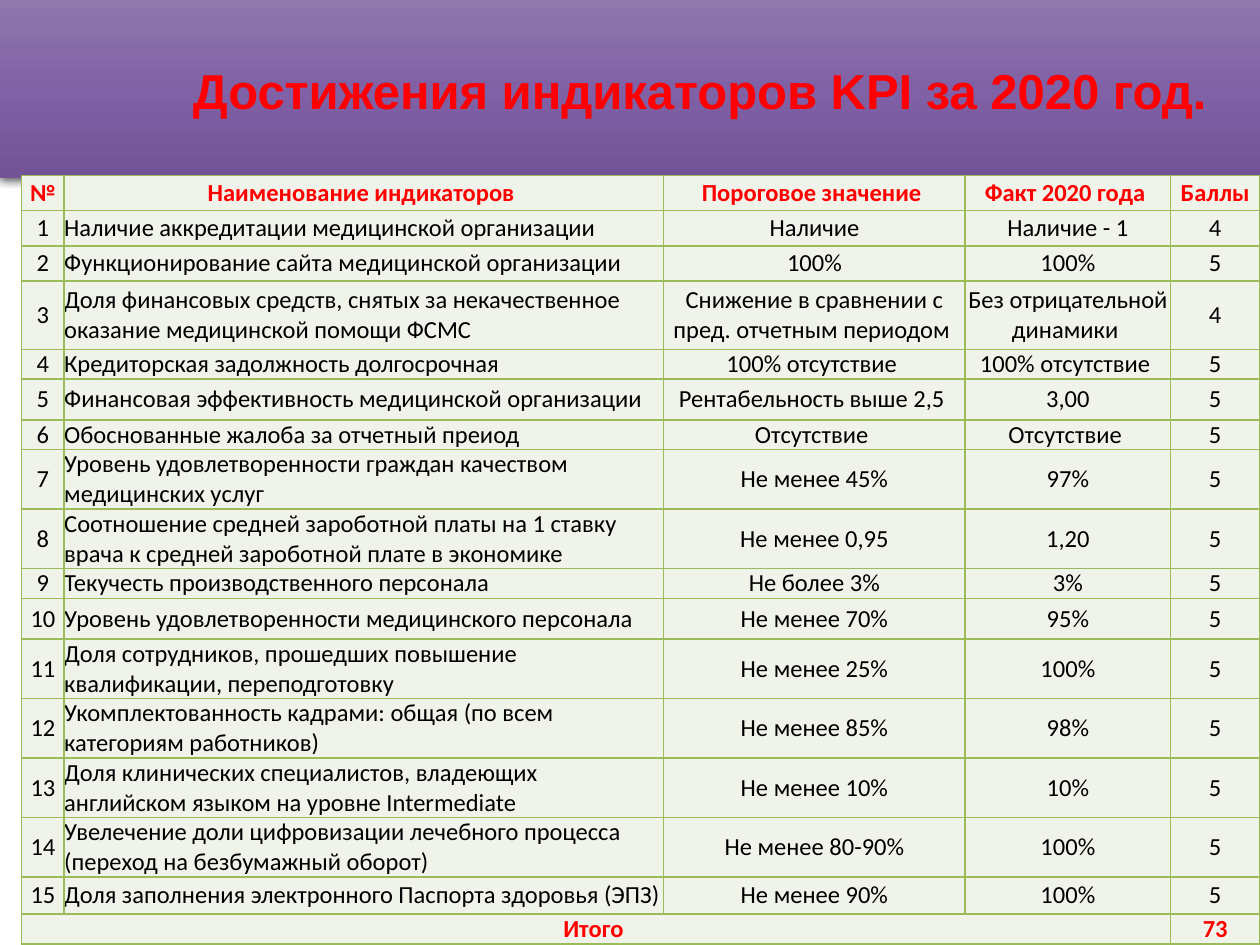
from copy import deepcopy

from pptx import Presentation
from pptx.dml.color import RGBColor
from pptx.enum.shapes import MSO_SHAPE
from pptx.enum.text import MSO_ANCHOR, MSO_AUTO_SIZE, PP_ALIGN
from pptx.oxml import parse_xml
from pptx.oxml.ns import nsdecls, qn
from pptx.util import Pt

RECTANGLE = MSO_SHAPE.RECTANGLE
MIDDLE = MSO_ANCHOR.MIDDLE
GROW = MSO_AUTO_SIZE.SHAPE_TO_FIT_TEXT
LEFT, CENTER, JUSTIFY = PP_ALIGN.LEFT, PP_ALIGN.CENTER, PP_ALIGN.JUSTIFY

RED = RGBColor(0xFF, 0x00, 0x00)
BLACK = RGBColor(0x00, 0x00, 0x00)
CELL_FILL = RGBColor(0xEF, 0xF3, 0xEA)
BORDER = RGBColor(0x9B, 0xBB, 0x59)
BAND_COLORS = (RGBColor(0x8E, 0x78, 0xAC), RGBColor(0x80, 0x61, 0xA5),
               RGBColor(0x71, 0x53, 0x96))

TITLE = "Достижения индикаторов KPI за 2020 год."
HEADER = ("№", "Наименование индикаторов ", "Пороговое значение ",
          "Факт 2020 года ", "Баллы")
# Name, threshold, actual value, points
INDICATORS = (
    ("Наличие аккредитации медицинской организации", "Наличие", "Наличие - 1", 4),
    ("Функционирование сайта медицинской организации", "100%", "100%", 5),
    ("Доля финансовых средств, снятых за некачественное оказание медицинской помощи ФСМС",
     "Снижение в сравнении с пред. отчетным периодом ", "Без отрицательной динамики ", 4),
    ("Кредиторская задолжность долгосрочная", "100% отсутствие ", "100% отсутствие ", 5),
    ("Финансовая эффективность медицинской организации", "Рентабельность выше 2,5 ",
     "3,00", 5),
    ("Обоснованные жалоба за отчетный преиод", "Отсутствие ", "Отсутствие ", 5),
    ("Уровень удовлетворенности граждан качеством медицинских услуг",
     "Не менее 45%", "97%", 5),
    ("Соотношение средней зароботной платы на 1 ставку врача к средней зароботной "
     "плате в экономике", "Не менее 0,95", "1,20", 5),
    ("Текучесть производственного персонала", "Не более 3%", "3%", 5),
    ("Уровень удовлетворенности медицинского персонала", "Не менее 70%", "95%", 5),
    ("Доля сотрудников, прошедших повышение квалификации, переподготовку",
     "Не менее 25%", "100%", 5),
    ("Укомплектованность кадрами: общая (по всем категориям работников)",
     "Не менее 85%", "98%", 5),
    ("Доля клинических специалистов, владеющих английском языком на уровне Intermediate",
     "Не менее 10%", "10%", 5),
    ("Увелечение доли цифровизации лечебного процесса (переход на безбумажный оборот)",
     "Не менее 80-90%", "100%", 5),
    ("Доля заполнения электронного Паспорта здоровья (ЭПЗ)", "Не менее 90%", "100%", 5),
)
TOTAL_LABEL = "Итого "

COLUMN_SHARES = (24.3, 342.6, 172.3, 117.4, 50.9)
ONE_LINE, TWO_LINES = 17.1, 34.1
ROW_HEIGHTS = (20, 20.5, 20, 39.2, ONE_LINE, 23.3, ONE_LINE, TWO_LINES, TWO_LINES,
               ONE_LINE, 23.3, *[TWO_LINES] * 4, 21.3, ONE_LINE)


def format_paragraph(paragraph, alignment, font_name, size, color, bold):
    paragraph.alignment = alignment
    for run in paragraph.runs:
        run.font.name = font_name
        run.font.size = Pt(size)
        run.font.bold = bold
        run.font.color.rgb = color


def add_band(slide, left, top, width, height):
    band = slide.shapes.add_shape(RECTANGLE, Pt(left), Pt(top), Pt(width), Pt(height))
    band.line.fill.background()

    # Three-stop gradient running downwards
    band.fill.gradient()
    band.fill.gradient_angle = 270
    properties = band._element.spPr
    stop_list = properties.find(".//" + qn("a:gsLst"))
    stop_list.append(deepcopy(stop_list[-1]))
    for index, (stop, color) in enumerate(zip(band.fill.gradient_stops, BAND_COLORS)):
        stop.position = index / 2
        stop.color.rgb = color

    # Soft shadow below the band
    band.shadow.inherit = False
    properties.find(qn("a:effectLst")).append(parse_xml(
        f'<a:outerShdw {nsdecls("a")} blurRad="{Pt(4.5)}" dist="{Pt(1.5)}" dir="5400000" '
        'rotWithShape="0"><a:srgbClr val="000000"><a:alpha val="63000"/></a:srgbClr>'
        '</a:outerShdw>'))

    # The band lies behind the title placeholder
    slide.shapes._spTree.insert(2, band._element)


def place_title(slide, left, top, width, height):
    title = slide.shapes.title
    title.left, title.top = Pt(left), Pt(top)
    title.width, title.height = Pt(width), Pt(height)
    frame = title.text_frame
    frame.text = TITLE
    frame.word_wrap = True
    frame.auto_size = GROW
    frame.vertical_anchor = MIDDLE
    format_paragraph(frame.paragraphs[0], JUSTIFY, "Arial", 28, RED, True)


def add_borders(cell):
    properties = cell._tc.get_or_add_tcPr()
    for index, side in enumerate(("lnL", "lnR", "lnT", "lnB")):
        properties.insert(index, parse_xml(
            f'<a:{side} {nsdecls("a")} w="{Pt(1)}"><a:solidFill>'
            f'<a:srgbClr val="{BORDER}"/></a:solidFill></a:{side}>'))


def style_cell(cell, text, alignment, color, bold):
    cell.margin_left = cell.margin_right = cell.margin_top = cell.margin_bottom = 0
    cell.vertical_anchor = MIDDLE
    cell.fill.solid()
    cell.fill.fore_color.rgb = CELL_FILL
    add_borders(cell)
    cell.text_frame.text = text
    paragraph = cell.text_frame.paragraphs[0]
    paragraph.font.size = Pt(14)
    format_paragraph(paragraph, alignment, "Calibri", 14, color, bold)


def add_indicator_table(slide, left, top, width, height):
    total = sum(points for *_, points in INDICATORS)
    rows = [HEADER]
    rows += [(str(number), name, threshold, actual, str(points))
             for number, (name, threshold, actual, points) in enumerate(INDICATORS, 1)]
    rows.append((TOTAL_LABEL, "", "", "", str(total)))

    table = slide.shapes.add_table(len(rows), len(HEADER), Pt(left), Pt(top),
                                   Pt(width), Pt(height)).table
    table.first_row = table.horz_banding = False
    for column, share in zip(table.columns, COLUMN_SHARES):
        column.width = Pt(width * share / sum(COLUMN_SHARES))
    for row, row_height in zip(table.rows, ROW_HEIGHTS):
        row.height = Pt(height * row_height / sum(ROW_HEIGHTS))

    last = len(rows) - 1
    for row_index, texts in enumerate(rows):
        strong = row_index in (0, last)
        for column_index, text in enumerate(texts):
            alignment = LEFT if column_index == 1 and not strong else CENTER
            style_cell(table.cell(row_index, column_index), text, alignment,
                       RED if strong else BLACK, strong)

    # The total label spans everything but the points column
    table.cell(last, 0).merge(table.cell(last, len(HEADER) - 2))


def main():
    presentation = Presentation()
    presentation.slide_width, presentation.slide_height = Pt(720), Pt(540)
    slide = presentation.slides.add_slide(presentation.slide_layouts[5])
    add_band(slide, 0, 0, 720, 101.5)
    place_title(slide, 103, 31, 597, 41)
    add_indicator_table(slide, 12.4, 100.3, 707.5, 439.4)
    presentation.save("out.pptx")


if __name__ == "__main__":
    main()
